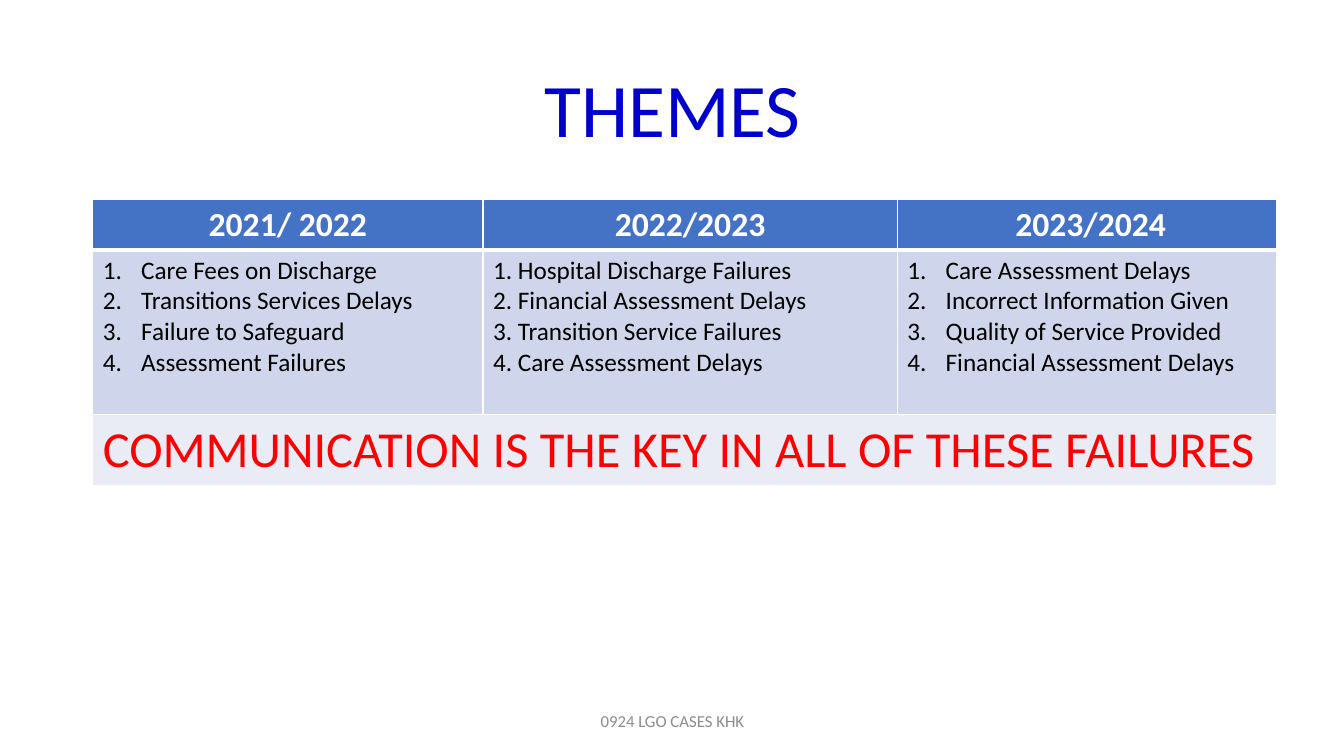
from lxml import etree
from pptx import Presentation
from pptx.dml.color import RGBColor
from pptx.enum import text as t
from pptx.oxml import ns
from pptx.util import Inches, Pt

WHITE = RGBColor(0xFF, 0xFF, 0xFF)
BLACK = RGBColor(0, 0, 0)
TITLE_BLUE = RGBColor(0, 0, 0xCC)
HEADER_BLUE = RGBColor(0x44, 0x72, 0xC4)
BAND_DARK = RGBColor(0xCF, 0xD5, 0xEA)
BAND_LIGHT = RGBColor(0xE9, 0xEB, 0xF5)
RED = RGBColor(0xFF, 0, 0)
GREY = RGBColor(0x8C, 0x8C, 0x8C)

# Year, whether the list numbers itself, themes
YEARS = [
    ("2021/ 2022", True, ["Care Fees on Discharge", "Transitions Services Delays",
                          "Failure to Safeguard", "Assessment Failures"]),
    ("2022/2023", False, ["1. Hospital Discharge Failures", "2. Financial Assessment Delays",
                          "3. Transition Service Failures", "4. Care Assessment Delays"]),
    (" 2023/2024", True, ["Care Assessment Delays", "Incorrect Information Given",
                          "Quality of Service Provided", "Financial Assessment Delays"]),
]
COLUMN_WIDTHS = [3.87, 4.11, 3.76]
ROW_HEIGHTS = [0.5, 1.63, 0.71]


def write(frame, lines, size, color, bold=False, align=t.PP_ALIGN.LEFT,
          spacing=1.0, numbered=False):
    """Fill a text frame with one paragraph per line."""
    frame.word_wrap = True
    for i, line in enumerate(lines):
        paragraph = frame.paragraphs[0] if i == 0 else frame.add_paragraph()
        paragraph.alignment = align
        paragraph.line_spacing = spacing
        run = paragraph.add_run()
        run.text = line
        run.font.name = "Calibri"
        run.font.size = Pt(size)
        run.font.bold = bold
        run.font.color.rgb = color
        if numbered:
            properties = paragraph._p.get_or_add_pPr()
            properties.set("marL", str(Inches(0.38)))
            properties.set("indent", str(-Inches(0.38)))
            etree.SubElement(properties, ns.qn("a:buAutoNum"), type="arabicPeriod")


def paint(cell, color, bottom=1):
    """Fill a cell and give it white borders, the bottom one in points."""
    cell.fill.solid()
    cell.fill.fore_color.rgb = color
    sides = [("L", 1), ("R", 1), ("T", 1), ("B", bottom)]
    for i, (side, width) in enumerate(sides):
        border = etree.Element(ns.qn("a:ln" + side), w=str(Pt(width)))
        solid = etree.SubElement(border, ns.qn("a:solidFill"))
        etree.SubElement(solid, ns.qn("a:srgbClr"), val=str(WHITE))
        cell._tc.get_or_add_tcPr().insert(i, border)


prs = Presentation()
prs.slide_width, prs.slide_height = Inches(13.33), Inches(7.5)
slide = prs.slides.add_slide(prs.slide_layouts[6])

title = slide.shapes.add_textbox(Inches(0.92), Inches(0.4), Inches(11.5), Inches(1.45))
title.text_frame.vertical_anchor = t.MSO_ANCHOR.MIDDLE
write(title.text_frame, ["THEMES"], 54, TITLE_BLUE, align=t.PP_ALIGN.CENTER, spacing=0.9)

themes = slide.shapes.add_table(3, 3, Inches(0.92), Inches(1.98),
                                Inches(sum(COLUMN_WIDTHS)), Inches(sum(ROW_HEIGHTS))).table
for column, width in zip(themes.columns, COLUMN_WIDTHS):
    column.width = Inches(width)
for row, height in zip(themes.rows, ROW_HEIGHTS):
    row.height = Inches(height)

themes.cell(2, 0).merge(themes.cell(2, 2))
for col, (year, numbered, failures) in enumerate(YEARS):
    header, body, conclusion = (themes.cell(row, col) for row in range(3))
    paint(header, HEADER_BLUE, bottom=3)
    paint(body, BAND_DARK)
    paint(conclusion, BAND_LIGHT)
    write(header.text_frame, [year], 24, WHITE, bold=True, align=t.PP_ALIGN.CENTER)
    write(body.text_frame, failures, 18, BLACK, numbered=numbered)
write(themes.cell(2, 0).text_frame,
      ["COMMUNICATION IS THE KEY IN ALL OF THESE FAILURES"], 36, RED)

footer = slide.shapes.add_textbox(Inches(4.42), Inches(6.95), Inches(4.5), Inches(0.4))
footer.text_frame.vertical_anchor = t.MSO_ANCHOR.MIDDLE
write(footer.text_frame, ["0924 LGO CASES KHK"], 12, GREY, align=t.PP_ALIGN.CENTER)

prs.save("out.pptx")
